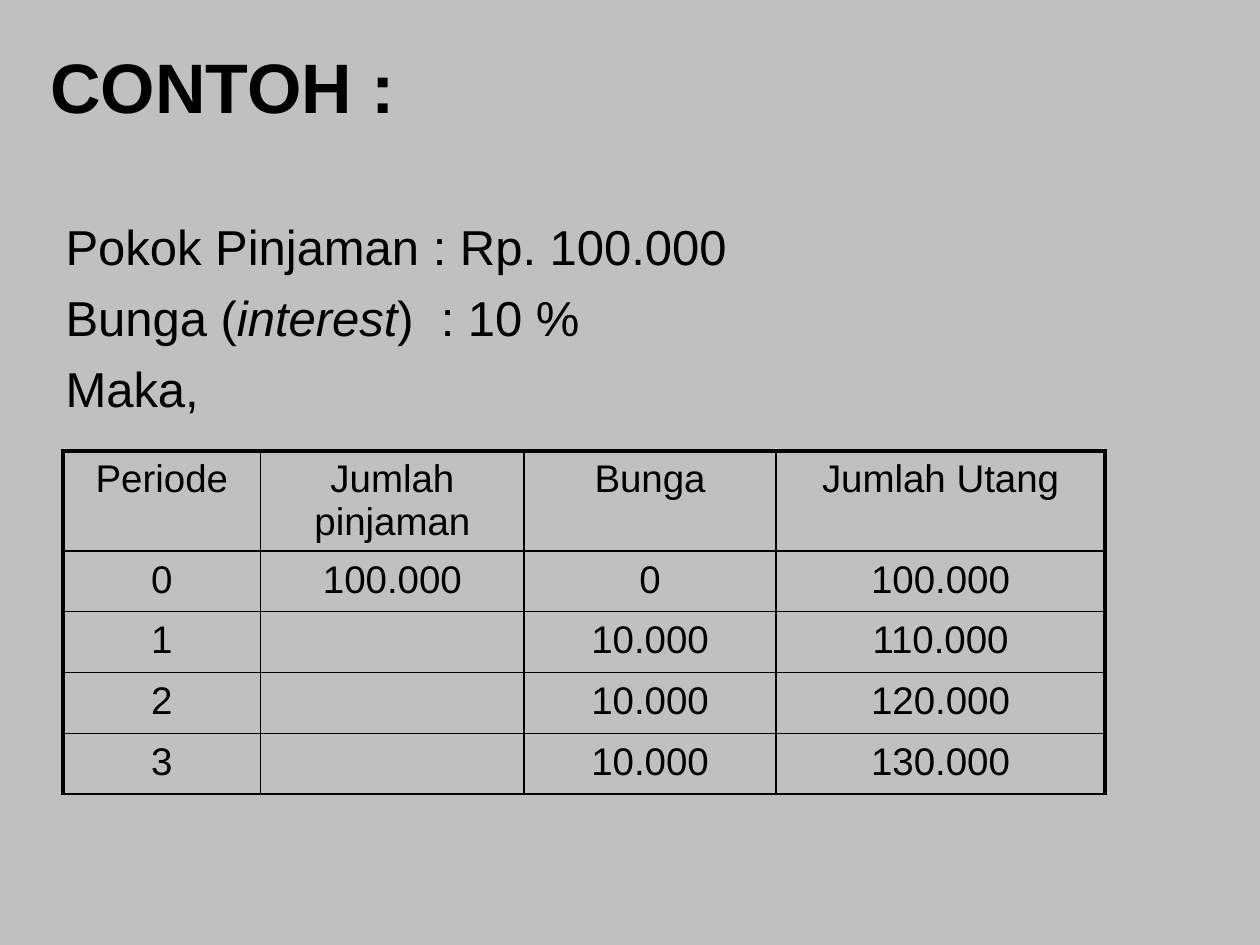
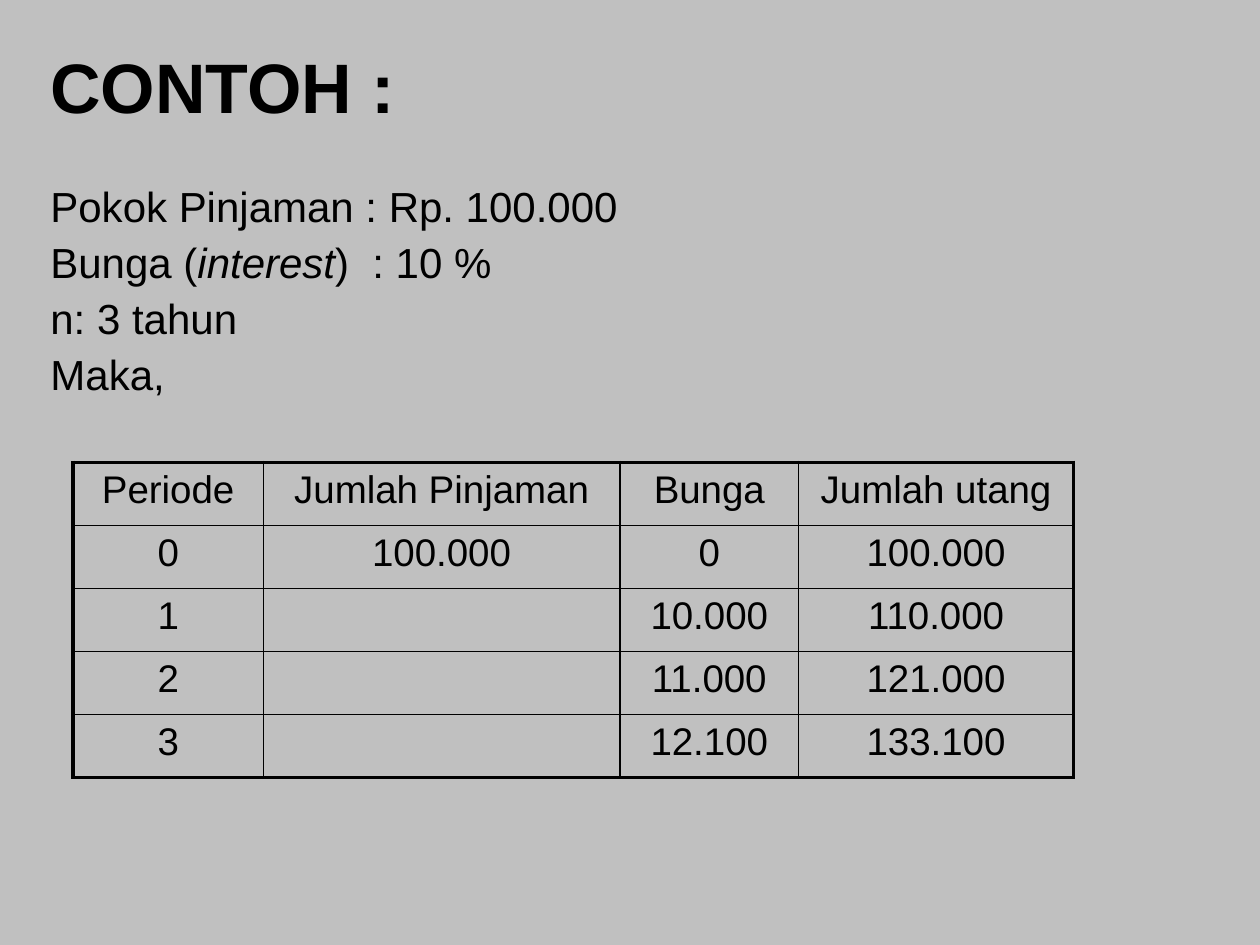
from lxml.etree import SubElement
from pptx import Presentation
from pptx.dml.color import RGBColor
from pptx.enum.text import MSO_ANCHOR, MSO_AUTO_SIZE, PP_ALIGN
from pptx.oxml.ns import qn
from pptx.util import Pt

GREY = RGBColor(0xC0, 0xC0, 0xC0)
BLACK = RGBColor(0x00, 0x00, 0x00)
FONT = "Arial"
TITLE_BOX = (21.6, 0, 653.76, 97.92)
TITLE_SIZE, CELL_SIZE = 40, 22
OUTER_LINE, INNER_LINE = 2.25, 1

PRINCIPAL = [("Pokok Pinjaman : Rp. 100.000", False)]
INTEREST = [("Bunga (", False), ("interest", True), (")  : 10 %", False)]
DURATION = [("n: 3 tahun", False)]
THEREFORE = [("Maka,", False)]


def add_run(para, text, size, bold=False, italic=False):
    span = para.add_run()
    span.text = text
    font = span.font
    font.name, font.size = FONT, Pt(size)
    font.bold, font.italic = bold, italic
    font.color.rgb = BLACK


def place(shape, box):
    shape.left, shape.top, shape.width, shape.height = map(Pt, box)


def add_title(page, text):
    title = page.shapes.title
    place(title, TITLE_BOX)
    frame = title.text_frame
    frame.vertical_anchor = MSO_ANCHOR.MIDDLE
    frame.auto_size = MSO_AUTO_SIZE.NONE
    para = frame.paragraphs[0]
    para.alignment = PP_ALIGN.LEFT
    add_run(para, text, TITLE_SIZE, bold=True)


def add_facts(page, box, facts, size, line_spacing):
    """Fill the body placeholder with unbulleted lines."""
    body = page.placeholders[1]
    place(body, box)
    frame = body.text_frame
    frame.auto_size = MSO_AUTO_SIZE.NONE
    for index, fact in enumerate(facts):
        para = frame.add_paragraph() if index else frame.paragraphs[0]
        para.line_spacing = line_spacing
        para.space_before = Pt(size / 4)
        properties = para._p.get_or_add_pPr()
        properties.set("marL", "0")
        properties.set("indent", "0")
        SubElement(properties, qn("a:buNone"))
        for text, italic in fact:
            add_run(para, text, size, italic=italic)


def set_borders(cell, widths):
    """Draw the left, right, top and bottom lines of a cell."""
    properties = cell._tc.get_or_add_tcPr()
    for side, width in zip("LRTB", widths):
        line = SubElement(properties, qn(f"a:ln{side}"), w=str(Pt(width)))
        fill = SubElement(line, qn("a:solidFill"))
        SubElement(fill, qn("a:srgbClr"), val=str(BLACK))


def add_loan_table(page, origin, columns, heights, rows, insets, bottom_line):
    left, top = origin
    frame = page.shapes.add_table(len(rows), len(columns), Pt(left), Pt(top),
                                  Pt(sum(columns)), Pt(sum(heights)))
    table = frame.table
    table.first_row = table.horz_banding = False
    for column, width in zip(table.columns, columns):
        column.width = Pt(width)
    for row, height in zip(table.rows, heights):
        row.height = Pt(height)

    last_row, last_column = len(rows) - 1, len(columns) - 1
    side_inset, top_inset = map(Pt, insets)
    for r, values in enumerate(rows):
        for c, value in enumerate(values):
            cell = table.cell(r, c)
            cell.margin_left = cell.margin_right = side_inset
            cell.margin_top = cell.margin_bottom = top_inset
            set_borders(cell, (
                OUTER_LINE if c == 0 else INNER_LINE,
                OUTER_LINE if c == last_column else INNER_LINE,
                OUTER_LINE if r == 0 else INNER_LINE,
                bottom_line if r == last_row else INNER_LINE,
            ))
            cell.fill.background()
            para = cell.text_frame.paragraphs[0]
            para.alignment = PP_ALIGN.CENTER
            para.font.size = Pt(CELL_SIZE)
            if value:
                add_run(para, value, CELL_SIZE)


def add_example(deck):
    page = deck.slides.add_slide(deck.slide_layouts[1])
    add_title(page, "CONTOH :")
    return page


def add_simple_interest(deck):
    page = add_example(deck)
    add_facts(page, (30.24, 120.24, 635.76, 360),
              [PRINCIPAL, INTEREST, THEREFORE], 28, 1.0)
    rows = [
        ("Periode", "Jumlah pinjaman", "Bunga", "Jumlah Utang"),
        ("0", "100.000", "0", "100.000"),
        ("1", "", "10.000", "110.000"),
        ("2", "", "10.000", "120.000"),
        ("3", "", "10.000", "130.000"),
    ]
    add_loan_table(page, (36, 257.76), (113, 150.5, 144, 188),
                   [57] + [34.5] * 4, rows, (7.9, 4), INNER_LINE)


def add_compound_interest(deck):
    page = add_example(deck)
    add_facts(page, (21.6, 102.96, 644.4, 377.28),
              [PRINCIPAL, INTEREST, DURATION, THEREFORE], 24, 0.9)
    rows = [
        ("Periode", "Jumlah Pinjaman", "Bunga", "Jumlah utang"),
        ("0", "100.000", "0", "100.000"),
        ("1", "", "10.000", "110.000"),
        ("2", "", "11.000", "121.000"),
        ("3", "", "12.100", "133.100"),
    ]
    add_loan_table(page, (41.76, 264.24), (108.7, 203.8, 102.2, 157),
                   [36] * 5, rows, (6.5, 3.6), OUTER_LINE)


def main():
    deck = Presentation()
    deck.slide_width, deck.slide_height = Pt(720), Pt(540)
    # Shared background
    background = deck.slide_master.background.fill
    background.solid()
    background.fore_color.rgb = GREY
    add_simple_interest(deck)
    add_compound_interest(deck)
    deck.save("out.pptx")


if __name__ == "__main__":
    main()
